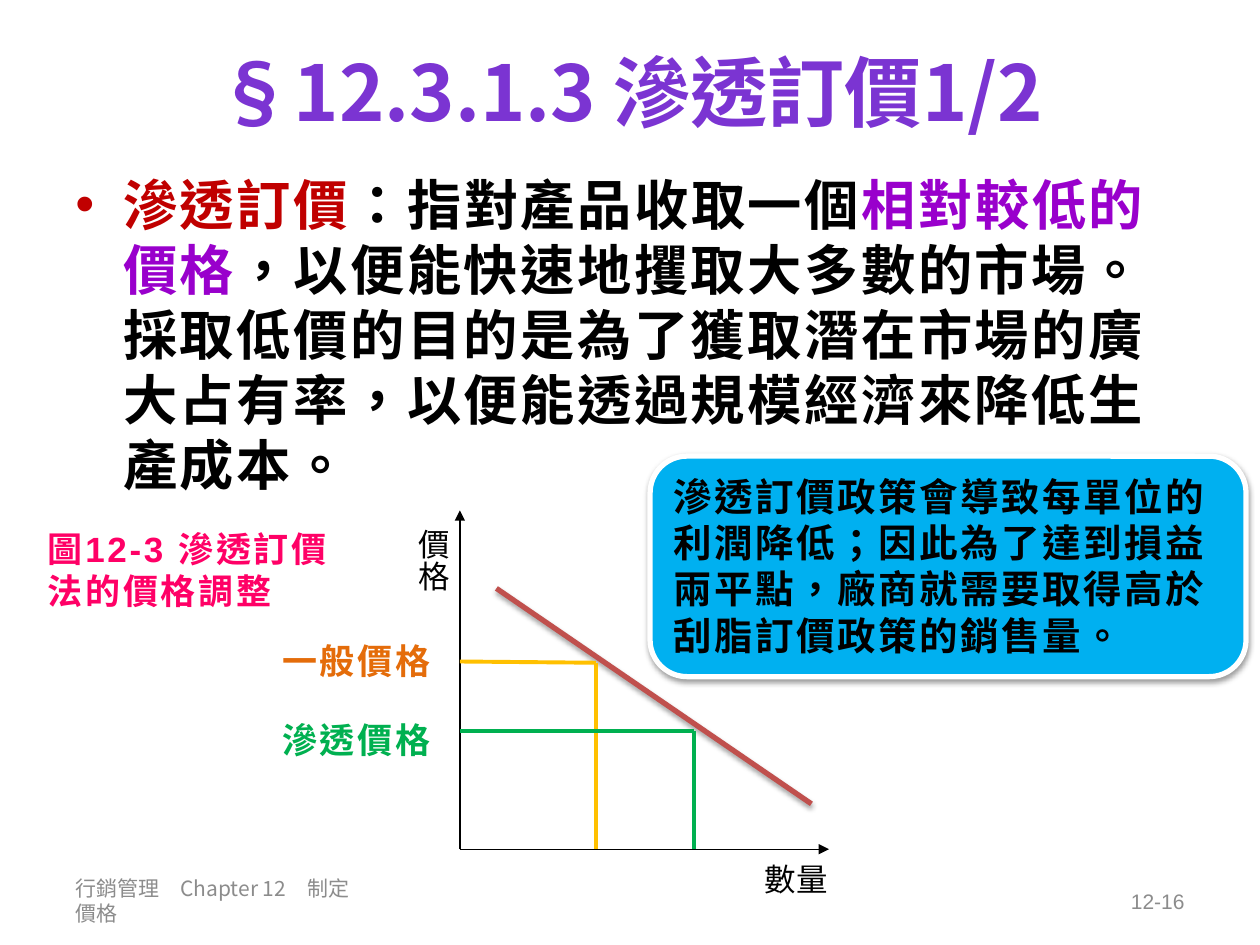
from lxml.etree import SubElement
from pptx import Presentation
from pptx.dml.color import RGBColor
from pptx.enum.lang import MSO_LANGUAGE_ID as Language
from pptx.enum.shapes import MSO_CONNECTOR as Connector, MSO_SHAPE as Shape
from pptx.enum.text import MSO_ANCHOR as Anchor, PP_ALIGN as Align
from pptx.oxml.ns import qn
from pptx.util import Inches, Pt

THEME = {
    "latin": "Arial", "cjk": "Noto Sans CJK SC",
    "title": "7B34D2", "term": "C00000", "accent": "9900CC", "ink": "000000",
    "muted": "8C8C8C", "caption": "FF0066", "demand": "C0504D",
    "regular": "FFC000", "regular_label": "E46C0A", "penetration": "00B050",
    "callout": "00B0F0", "white": "FFFFFF",
    "title_size": 44, "body_size": 31, "callout_size": 22, "label_size": 20,
    "axis_size": 18, "footer_size": 12, "tracking": 1.5, "leading": 1.2,
}

TITLE = "§12.3.1.3 滲透訂價1/2"
BODY = [
    ("滲透訂價", "term"),
    ("：指對產品收取一個", "ink"),
    ("相對較低的價格", "accent"),
    ("，以便能快速地攫取大多數的市場。採取低價的目的是為了獲取潛在市場的廣大占有率，"
     "以便能透過規模經濟來降低生產成本。", "ink"),
]
CALLOUT = "滲透訂價政策會導致每單位的利潤降低；因此為了達到損益兩平點，廠商就需要取得高於刮脂訂價政策的銷售量。"
# text, colour, box
LABELS = [
    ("圖12-3 滲透訂價法的價格調整", "caption", (0.28, 4.14, 2.52, 0.77)),
    ("一般價格", "regular_label", (2.14, 5.03, 1.82, 0.44)),
    ("滲透價格", "penetration", (2.14, 5.65, 1.57, 0.44)),
]
# text, font, alignment, box
FOOTERS = [
    ("行銷管理　Chapter 12　制定價格", "cjk", Align.LEFT, (0.5, 6.95, 2.45, 0.4)),
    ("12-16", "latin", Align.RIGHT, (7.17, 6.95, 2.33, 0.4)),
]
ORIGIN = (3.65, 6.74)
AXIS_ENDS = [(3.65, 4.05), (6.58, 6.74)]
DEMAND = [(3.94, 4.67), (6.44, 6.38)]
# colour, height at the price axis, corner on the demand line
PRICES = [("regular", 5.25, (4.73, 5.26)), ("penetration", 5.8, (5.51, 5.8))]


def color(name):
    return RGBColor.from_string(THEME[name])


def inches(values):
    return [Inches(value) for value in values]


def add_run(paragraph, text, size, color_name, font="latin", bold=False, tracking=0):
    run = paragraph.add_run()
    run.text = text
    run.font.size = Pt(THEME[size])
    run.font.bold = bold
    run.font.name = THEME[font]
    run.font.language_id = Language.TRADITIONAL_CHINESE
    run.font.color.rgb = color(color_name)
    properties = run.font._element
    if tracking:
        properties.set("spc", str(int(tracking * 100)))
    SubElement(properties, qn("a:ea"), typeface=THEME[font])


def fill_text(shape, runs, size, align=Align.LEFT, anchor=Anchor.TOP, **style):
    frame = shape.text_frame
    frame.word_wrap = True
    frame.vertical_anchor = anchor
    paragraph = frame.paragraphs[0]
    paragraph.alignment = align
    paragraph.line_spacing = Pt(round(THEME[size] * THEME["leading"], 1))
    for text, color_name in runs:
        add_run(paragraph, text, size, color_name, **style)
    return paragraph


def add_text(slide, box, runs, size, **style):
    shape = slide.shapes.add_textbox(*inches(box))
    return shape, fill_text(shape, runs, size, **style)


def add_soft_shadow(effects):
    shadow = SubElement(effects, qn("a:outerShdw"), blurRad=str(Pt(3.1)),
                        dist=str(Pt(1.6)), dir="5400000", rotWithShape="0")
    tint = SubElement(shadow, qn("a:srgbClr"), val=THEME["ink"])
    SubElement(tint, qn("a:alpha"), val="38000")


def add_line(slide, start, end, color_name, width, arrow=False, shadow=False):
    line = slide.shapes.add_connector(Connector.STRAIGHT, *inches(start + end))
    line.line.color.rgb = color(color_name)
    line.line.width = Pt(width)
    if arrow:
        SubElement(line.line._get_or_add_ln(), qn("a:tailEnd"), type="triangle")
    effects = SubElement(line._element.spPr, qn("a:effectLst"))
    if shadow:
        add_soft_shadow(effects)


def add_title(slide):
    title = slide.shapes.title
    title.left, title.top, title.width, title.height = inches((0.5, 0.13, 9, 1.18))
    paragraph = fill_text(title, [(TITLE, "title")], "title_size", align=Align.CENTER,
                          anchor=Anchor.MIDDLE, font="cjk", bold=True)
    paragraph.line_spacing = 1.0


def add_body(slide):
    _, paragraph = add_text(slide, (0.5, 1.31, 9, 2.99), BODY, "body_size",
                            bold=True, tracking=THEME["tracking"])
    properties = paragraph._p.get_or_add_pPr()
    properties.set("marL", str(Inches(0.38)))
    properties.set("indent", str(Inches(-0.38)))
    SubElement(properties, qn("a:buFont"), typeface=THEME["latin"])
    SubElement(properties, qn("a:buChar"), char="•")


def add_chart_drawing(slide):
    for end in AXIS_ENDS:
        add_line(slide, ORIGIN, end, "ink", 0.75, arrow=True)
    add_text(slide, (5.97, 6.78, 0.91, 0.4), [("數量", "ink")], "axis_size")
    price_label, _ = add_text(slide, (3.14, 4.1, 0.5, 0.81), [("價格", "ink")], "axis_size")
    price_label.text_frame._txBody.bodyPr.set("vert", "eaVert")
    add_line(slide, *DEMAND, "demand", 3, shadow=True)
    for color_name, axis_height, corner in PRICES:
        add_line(slide, (ORIGIN[0], axis_height), corner, color_name, 2.25)
        add_line(slide, corner, (corner[0], ORIGIN[1]), color_name, 2.25)
    for text, color_name, box in LABELS:
        add_text(slide, box, [(text, color_name)], "label_size",
                 bold=True, tracking=THEME["tracking"])


def add_callout(slide):
    callout = slide.shapes.add_shape(Shape.ROUNDED_RECTANGLE,
                                     *inches((5.16, 3.62, 4.73, 1.75)))
    callout.fill.solid()
    callout.fill.fore_color.rgb = color("callout")
    callout.line.color.rgb = color("white")
    callout.line.width = Pt(3)
    callout.shadow.inherit = False
    add_soft_shadow(callout._element.spPr.find(qn("a:effectLst")))
    fill_text(callout, [(CALLOUT, "ink")], "callout_size",
              bold=True, tracking=THEME["tracking"])


def main():
    presentation = Presentation()
    presentation.slide_width, presentation.slide_height = inches((10, 7.5))
    slide = presentation.slides.add_slide(presentation.slide_layouts[5])
    add_title(slide)
    add_body(slide)
    for text, font, align, box in FOOTERS:
        add_text(slide, box, [(text, "muted")], "footer_size",
                 align=align, anchor=Anchor.MIDDLE, font=font)
    add_chart_drawing(slide)
    add_callout(slide)
    presentation.save("out.pptx")


if __name__ == "__main__":
    main()
